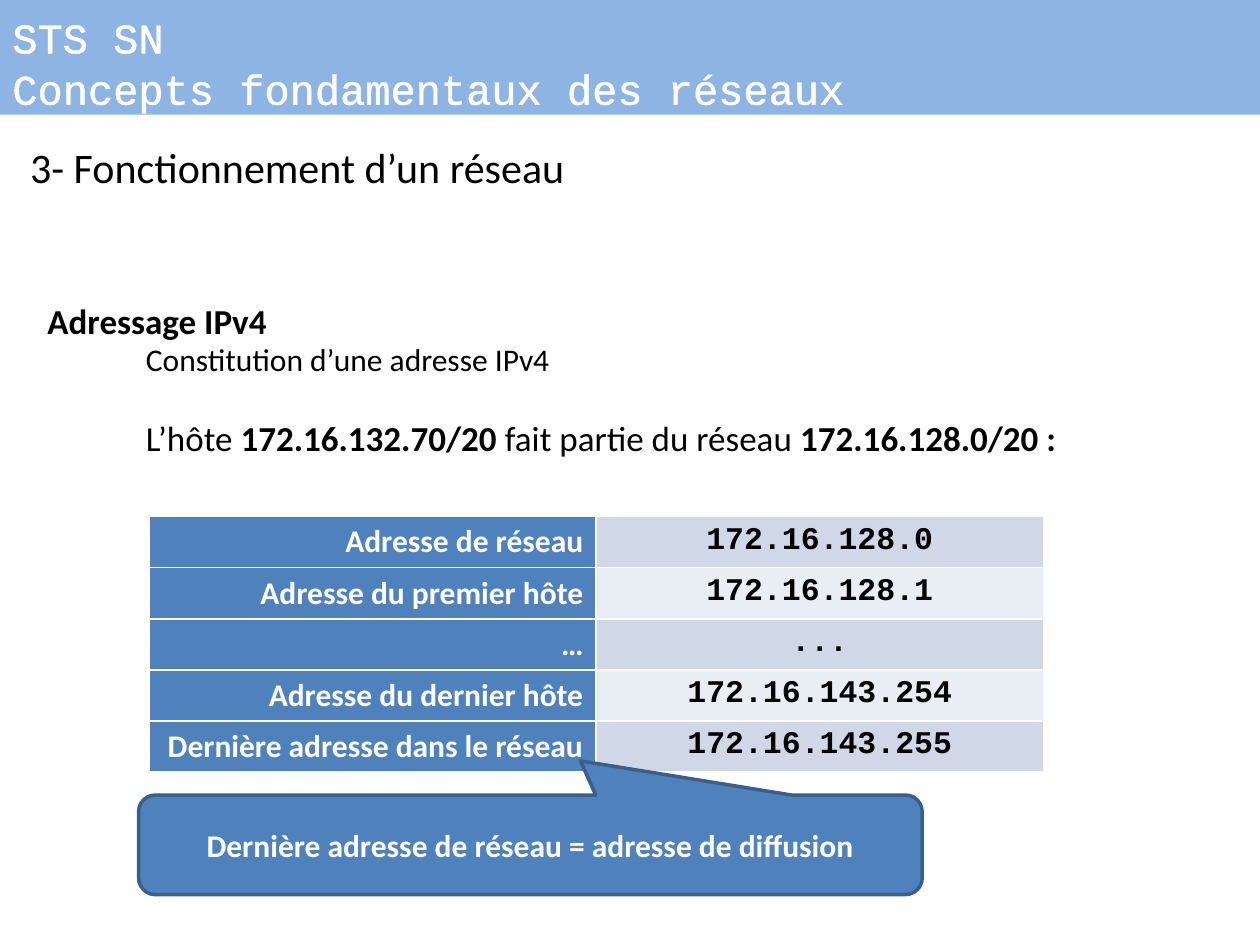
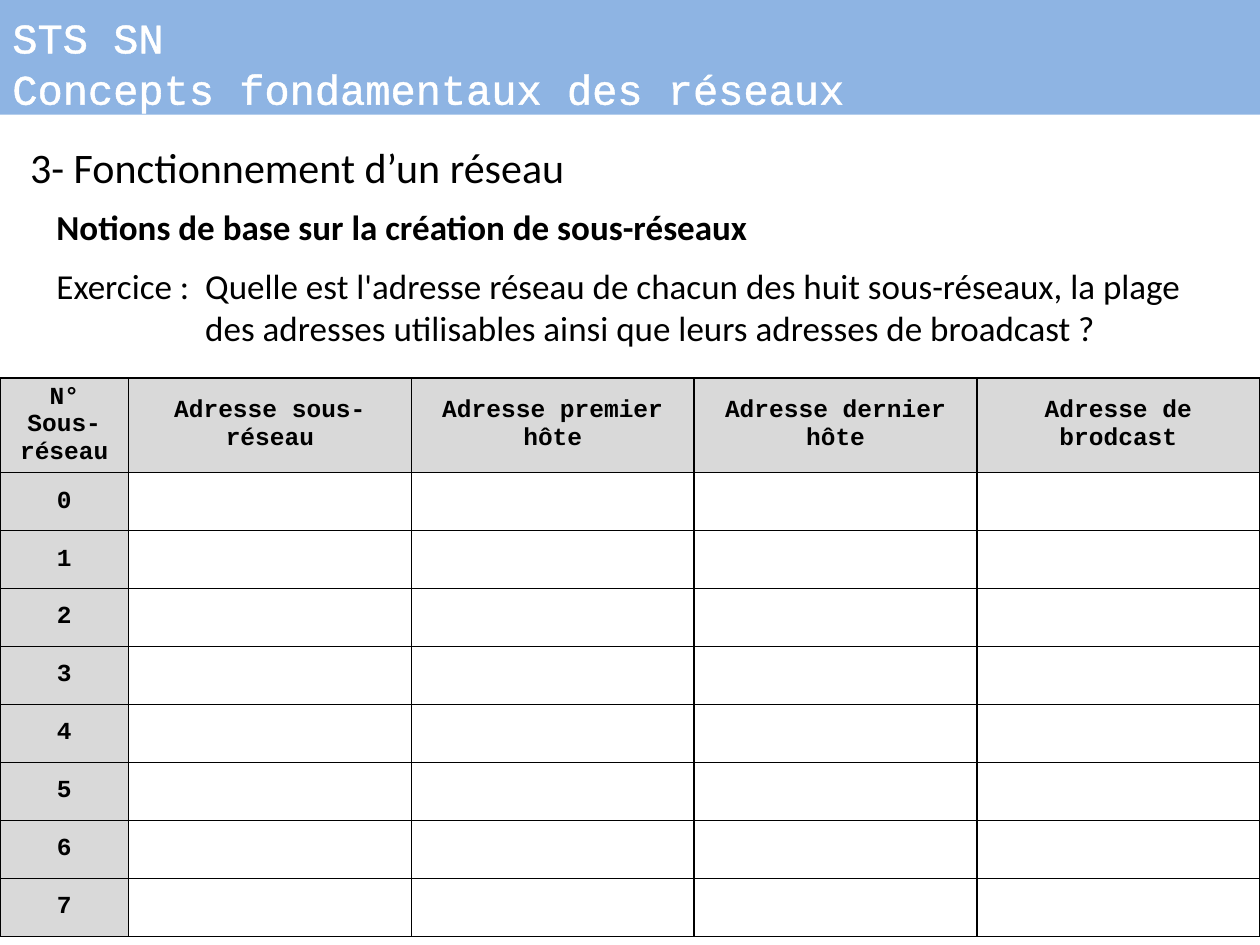
from dataclasses import dataclass

from lxml import etree
from pptx import Presentation
from pptx.dml.color import RGBColor
from pptx.enum.shapes import MSO_SHAPE
from pptx.enum.text import MSO_ANCHOR, MSO_AUTO_SIZE, PP_ALIGN
from pptx.oxml.ns import qn
from pptx.util import Pt

LEFT, CENTER, RIGHT = PP_ALIGN.LEFT, PP_ALIGN.CENTER, PP_ALIGN.RIGHT
TOP, MIDDLE = MSO_ANCHOR.TOP, MSO_ANCHOR.MIDDLE
NO_AUTOFIT = MSO_AUTO_SIZE.NONE
RECTANGLE = MSO_SHAPE.RECTANGLE
CALLOUT = MSO_SHAPE.ROUNDED_RECTANGULAR_CALLOUT
TITLE_ONLY = 5


@dataclass(frozen=True)
class Theme:
    """Colours, fonts and type sizes of the course."""
    band: str = "8EB4E3"
    blue: str = "4F81BD"
    blue_edge: str = "3A5F8C"
    row_dark: str = "D0D8E8"
    row_light: str = "E9EDF4"
    grey: str = "D9D9D9"
    white: str = "FFFFFF"
    black: str = "000000"
    body_font: str = "Calibri"
    code_font: str = "Courier New"
    heading: float = 24
    text: float = 20
    detail: float = 18
    grid: float = 14


THEME = Theme()
SLIDE_WIDTH, SLIDE_HEIGHT = 720, 540
COURSE = ("STS SN", "Concepts fondamentaux des réseaux")
SECTION = "3- Fonctionnement d’un réseau"
ADDRESSES = (
    ("Adresse de réseau", "172.16.128.0"),
    ("Adresse du premier hôte", "172.16.128.1"),
    ("…", "..."),
    ("Adresse du dernier hôte", "172.16.143.254"),
    ("Dernière adresse dans le réseau", "172.16.143.255"),
)
SUBNET_HEADERS = ("N° Sous-réseau", "Adresse sous-réseau", "Adresse premier hôte",
                  "Adresse dernier hôte", "Adresse de brodcast")
SUBNET_COUNT = 8


def style(paragraph, size, color=THEME.black, font=THEME.body_font, bold=None, align=LEFT):
    """Set the font and alignment of a paragraph."""
    paragraph.alignment = align
    paragraph.font.size = Pt(size)
    paragraph.font.name = font
    paragraph.font.bold = bold
    paragraph.font.color.rgb = RGBColor.from_string(color)


def paint(target, color):
    """Fill a shape or a cell with one colour."""
    target.fill.solid()
    target.fill.fore_color.rgb = RGBColor.from_string(color)


def add_line_properties(parent, tag, width, color, position):
    """Insert a solid line element in a run or cell property element."""
    line = etree.Element(qn(tag), w=str(Pt(width)))
    solid = etree.SubElement(line, qn("a:solidFill"))
    etree.SubElement(solid, qn("a:srgbClr"), val=color)
    parent.insert(position, line)


def add_shape(slide, kind, left, top, width, height, color):
    """Add a flat filled shape without outline."""
    shape = slide.shapes.add_shape(kind, Pt(left), Pt(top), Pt(width), Pt(height))
    shape.shadow.inherit = False
    paint(shape, color)
    shape.line.fill.background()
    return shape


def add_text(slide, left, top, width, height, wrap=True):
    """Add a text box and return its text frame."""
    frame = slide.shapes.add_textbox(Pt(left), Pt(top), Pt(width), Pt(height)).text_frame
    frame.word_wrap = wrap
    return frame


def add_band(slide):
    """Add the course band across the top of the slide."""
    frame = add_shape(slide, RECTANGLE, 0, 0, SLIDE_WIDTH, 65.5, THEME.band).text_frame
    frame.vertical_anchor = TOP
    frame.margin_top, frame.margin_bottom = Pt(6), 0
    frame.text = "\n".join(COURSE)
    for paragraph in frame.paragraphs:
        style(paragraph, THEME.heading, THEME.white, THEME.code_font)
        paragraph.line_spacing = Pt(29.3)
        run_properties = paragraph.runs[0].font._element
        add_line_properties(run_properties, "a:ln", 1.45, THEME.white, 0)


def add_course_slide(presentation):
    """Add a slide with the course band and the section title."""
    slide = presentation.slides.add_slide(presentation.slide_layouts[TITLE_ONLY])
    title = slide.shapes.title
    title.left, title.top, title.width, title.height = Pt(10), Pt(77), Pt(323), Pt(36)
    frame = title.text_frame
    frame.text = SECTION
    frame.word_wrap = False
    frame.auto_size = NO_AUTOFIT
    frame.vertical_anchor = TOP
    style(frame.paragraphs[0], THEME.heading)
    add_band(slide)
    return slide


def add_table(slide, left, top, widths, heights):
    """Add an unbanded table with the given column widths and row heights."""
    table = slide.shapes.add_table(len(heights), len(widths), Pt(left), Pt(top),
                                   Pt(sum(widths)), Pt(sum(heights))).table
    table.first_row = table.horz_banding = False
    for column, width in zip(table.columns, widths):
        column.width = Pt(width)
    for row, height in zip(table.rows, heights):
        row.height = Pt(height)
    return table


def format_cell(cell, fill, border):
    """Give a cell its fill and four borders."""
    paint(cell, fill)
    properties = cell._tc.get_or_add_tcPr()
    for position, tag in enumerate(("a:lnL", "a:lnR", "a:lnT", "a:lnB")):
        add_line_properties(properties, tag, 1, border, position)


def add_address_table(slide):
    """Add the table of notable addresses in the network."""
    table = add_table(slide, 85, 295.2, [255.6] * 2, [29.2] * len(ADDRESSES))
    for index, (label, address) in enumerate(ADDRESSES):
        label_cell, address_cell = table.rows[index].cells
        label_cell.text, address_cell.text = label, address
        format_cell(label_cell, THEME.blue, THEME.white)
        format_cell(address_cell, THEME.row_light if index % 2 else THEME.row_dark, THEME.white)
        style(label_cell.text_frame.paragraphs[0], THEME.detail, THEME.white,
              bold=True, align=RIGHT)
        style(address_cell.text_frame.paragraphs[0], THEME.detail,
              font=THEME.code_font, bold=True, align=CENTER)


def add_subnet_table(slide):
    """Add the exercise grid with one row per subnet."""
    number_width = 73.5
    other_columns = len(SUBNET_HEADERS) - 1
    widths = [number_width] + [(SLIDE_WIDTH - number_width) / other_columns] * other_columns
    table = add_table(slide, 0, 216, widths, [54] + [33.15] * SUBNET_COUNT)
    rows = [SUBNET_HEADERS]
    rows += [(str(number),) + ("",) * other_columns for number in range(SUBNET_COUNT)]
    for row, texts in zip(table.rows, rows):
        for cell, text in zip(row.cells, texts):
            format_cell(cell, THEME.grey if text else THEME.white, THEME.black)
            cell.vertical_anchor = MIDDLE
            cell.margin_left = cell.margin_right = Pt(5)
            cell.margin_top = cell.margin_bottom = 0
            cell.text = text
            paragraph = cell.text_frame.paragraphs[0]
            style(paragraph, THEME.grid, font=THEME.code_font, bold=True, align=CENTER)
            paragraph.space_before = paragraph.space_after = Pt(3)


def add_callout(slide, text):
    """Add the callout that points to the last address."""
    callout = add_shape(slide, CALLOUT, 79.2, 454.3, 447.8, 56.9, THEME.blue)
    for index, value in enumerate((0.064, -0.843, 0.167)):
        callout.adjustments[index] = round(value, 3)
    callout.line.color.rgb = RGBColor.from_string(THEME.blue_edge)
    callout.line.width = Pt(2)
    frame = callout.text_frame
    frame.text = text
    frame.vertical_anchor = MIDDLE
    style(frame.paragraphs[0], THEME.detail, THEME.white, bold=True, align=CENTER)


def build_addressing_slide(presentation):
    """Build the slide on the parts of an IPv4 network."""
    slide = add_course_slide(presentation)
    topic = add_text(slide, 20, 167.8, 675, 31.7)
    topic.text = "Adressage IPv4"
    style(topic.paragraphs[0], THEME.text, bold=True)

    details = add_text(slide, 76.3, 190.8, 544, 118.8, wrap=False)
    details.text = "Constitution d’une adresse IPv4"
    style(details.paragraphs[0], THEME.detail)
    host = details.add_paragraph()
    style(host, THEME.text)
    host.space_before = Pt(22)
    for text, bold in (("L’hôte", False), (" 172.16.132.70/20 ", True),
                       ("fait partie du réseau ", False), ("172.16.128.0/20 :", True)):
        run = host.add_run()
        run.text = text
        run.font.bold = bold

    add_address_table(slide)
    add_callout(slide, "Dernière adresse de réseau = adresse de diffusion")


def build_subnet_slide(presentation):
    """Build the exercise slide on subnets."""
    slide = add_course_slide(presentation)
    frame = add_text(slide, 25.2, 113.8, 674.6, 186.5)
    frame.text = "Notions de base sur la création de sous-réseaux"
    style(frame.paragraphs[0], THEME.text, bold=True)
    exercise = frame.add_paragraph()
    exercise.text = ("Exercice :\tQuelle est l'adresse réseau de chacun des huit sous-réseaux, "
                     "la plage des adresses utilisables ainsi que leurs adresses de broadcast ?")
    style(exercise, THEME.text)
    exercise.space_before = Pt(9.75)
    properties = exercise._p.get_or_add_pPr()
    properties.set("marL", str(Pt(85)))
    properties.set("indent", str(-Pt(85)))
    add_subnet_table(slide)


def main():
    """Build and save the presentation."""
    presentation = Presentation()
    presentation.slide_width, presentation.slide_height = Pt(SLIDE_WIDTH), Pt(SLIDE_HEIGHT)
    build_addressing_slide(presentation)
    build_subnet_slide(presentation)
    presentation.save("out.pptx")


if __name__ == "__main__":
    main()
